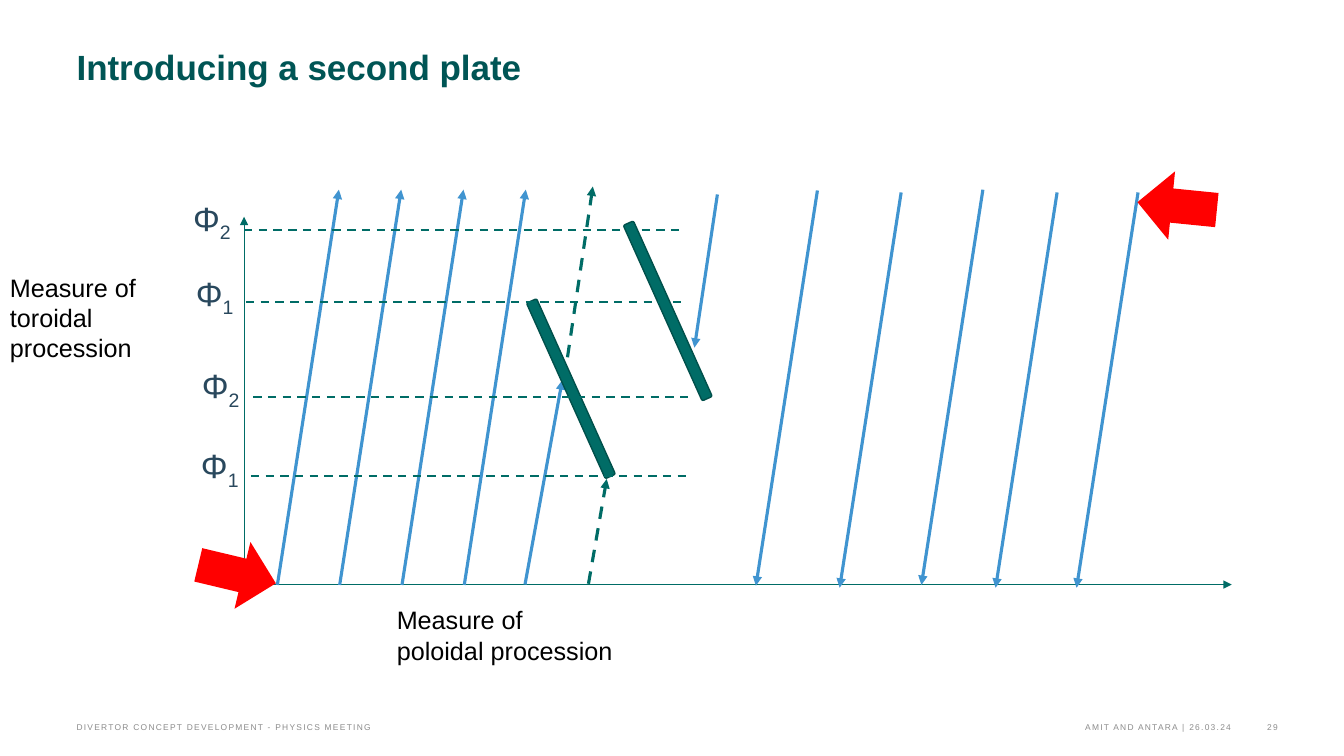
from lxml import etree
from pptx import Presentation
from pptx.dml.color import RGBColor
from pptx.enum.dml import MSO_LINE
from pptx.enum.shapes import MSO_CONNECTOR, MSO_SHAPE
from pptx.enum.text import MSO_ANCHOR, PP_ALIGN
from pptx.oxml.ns import qn
from pptx.util import Cm, Pt

STRAIGHT = MSO_CONNECTOR.STRAIGHT
DASH = MSO_LINE.DASH
PLATE_SHAPE, ARROW_SHAPE = MSO_SHAPE.ROUNDED_RECTANGLE, MSO_SHAPE.DOWN_ARROW
TOP, BOTTOM = MSO_ANCHOR.TOP, MSO_ANCHOR.BOTTOM
LEFT, CENTER, RIGHT = PP_ALIGN.LEFT, PP_ALIGN.CENTER, PP_ALIGN.RIGHT

TITLE_GREEN = RGBColor(0x00, 0x55, 0x55)
GREEN = RGBColor(0x00, 0x6C, 0x66)
DARK_GREEN = RGBColor(0x00, 0x50, 0x4B)
BLUE = RGBColor(0x40, 0x94, 0xD0)
RED = RGBColor(0xFF, 0x00, 0x00)
BLACK = RGBColor(0x00, 0x00, 0x00)
SLATE = RGBColor(0x29, 0x48, 0x5D)
GREY = RGBColor(0x8C, 0x8C, 0x8C)

FIELD_DX, FIELD_DY = 1.55, 9.96
UP_STARTS = [(6.99 + 1.57 * i, 14.74) for i in range(4)]
DOWN_STARTS = [(28.68, 4.85), (26.64, 4.85), (24.77, 4.78), (22.71, 4.85), (20.6, 4.8)]
LEVEL_LENGTH = 11
LEVELS = [
    ("1", (6.32, 11.99), (4.98, 11.56)),
    ("2", (6.38, 10.01), (5, 9.55)),
    ("1", (6.2, 7.62), (4.85, 7.21)),
    ("2", (6.15, 5.79), (4.78, 5.33)),
]
ORIGIN = (6.15, 14.73)


def style_font(font, size, color, bold=False):
    """Apply the slide's typeface with a size and colour."""
    font.name, font.size, font.bold = "Arial", Pt(size), bold
    font.color.rgb = color


def clear_margins(frame):
    """Remove the inner margins of a text frame."""
    frame.margin_left = frame.margin_right = frame.margin_top = frame.margin_bottom = 0


def add_title(slide, text):
    """Place and format the title placeholder."""
    title = slide.shapes.title
    title.left, title.top, title.width, title.height = Cm(1.93), Cm(1.22), Cm(26.59), Cm(2.18)
    frame = title.text_frame
    clear_margins(frame)
    frame.vertical_anchor = TOP
    frame.text = text
    paragraph = frame.paragraphs[0]
    paragraph.alignment = LEFT
    paragraph.line_spacing, paragraph.space_after = Pt(28), Pt(18)
    style_font(paragraph.runs[0].font, 25, TITLE_GREEN, True)


def add_text(slide, box, text, size, color):
    """Add a wrapping text box and return its frame."""
    frame = slide.shapes.add_textbox(*map(Cm, box)).text_frame
    frame.word_wrap = True
    frame.text = text
    style_font(frame.paragraphs[0].runs[0].font, size, color)
    return frame


def add_footer(slide, left, width, text, alignment):
    """Add one letter-spaced footer entry."""
    frame = add_text(slide, (left, 18.03, width, 0.41), text, 6, GREY)
    clear_margins(frame)
    frame.vertical_anchor = BOTTOM
    frame.paragraphs[0].alignment = alignment
    frame.paragraphs[0].runs[0].font._element.set("spc", "90")


def add_line(slide, start, end, color, width, dashed=False, arrow=True):
    """Draw a straight line, dashed or with an arrowhead at its end."""
    connector = slide.shapes.add_connector(STRAIGHT, *map(Cm, (*start, *end)))
    connector.line.color.rgb = color
    connector.line.width = Pt(width)
    if dashed:
        connector.line.dash_style = DASH
    properties = connector._element.spPr
    if arrow:
        etree.SubElement(properties.find(qn("a:ln")), qn("a:tailEnd"), type="triangle")
    etree.SubElement(properties, qn("a:effectLst"))


def add_field_line(slide, start, direction):
    """Draw a full field line, rising for 1 and falling for -1."""
    x, y = start
    end = (x + direction * FIELD_DX, y - direction * FIELD_DY)
    add_line(slide, start, end, BLUE, 2.25)


def add_rotated_shape(slide, kind, box, rotation, fill, outline=None):
    """Add a filled and rotated preset shape."""
    shape = slide.shapes.add_shape(kind, *map(Cm, box))
    shape.rotation = rotation
    shape.shadow.inherit = False
    shape.fill.solid()
    shape.fill.fore_color.rgb = fill
    if outline is None:
        shape.line.fill.background()
    else:
        shape.line.color.rgb = outline
        shape.line.width = Pt(1)


def add_plate(slide, left, top):
    """Add one tilted plate."""
    add_rotated_shape(slide, PLATE_SHAPE, (left, top, 0.28, 4.85), 335.8, GREEN, DARK_GREEN)


def add_entry_arrow(slide, left, top, rotation):
    """Add one red block arrow."""
    add_rotated_shape(slide, ARROW_SHAPE, (left, top, 1.73, 2.01), rotation, RED)


def add_level(slide, index, start, label_corner):
    """Draw a dashed angle level with its subscripted label."""
    x, y = start
    add_line(slide, start, (x + LEVEL_LENGTH, y), GREEN, 1.5, dashed=True, arrow=False)
    frame = add_text(slide, (*label_corner, 1.12, 0.81), "Φ", 24, SLATE)
    clear_margins(frame)
    paragraph = frame.paragraphs[0]
    paragraph.alignment, paragraph.line_spacing = CENTER, Pt(23)
    subscript = paragraph.add_run()
    subscript.text = index
    style_font(subscript.font, 24, SLATE)
    subscript.font._element.set("baseline", "-25000")


def main():
    """Build the slide and save it."""
    deck = Presentation()
    deck.slide_width, deck.slide_height = Cm(33.87), Cm(19.05)
    slide = deck.slides.add_slide(deck.slide_layouts[5])

    add_title(slide, "Introducing a second plate")
    for axis_end in ((6.15, 5.46), (31.04, 14.73)):
        add_line(slide, ORIGIN, axis_end, GREEN, 0.5)
    add_text(slide, (0, 6.73, 3.76, 2.57), "Measure of toroidal procession", 18, BLACK)
    add_text(slide, (9.75, 15.11, 5.94, 1.8), "Measure of poloidal procession", 18, BLACK)

    for start in UP_STARTS:
        add_field_line(slide, start, 1)
    add_line(slide, (13.23, 14.73), (14.17, 9.58), BLUE, 2.25)
    add_line(slide, (14.83, 14.71), (15.29, 12.07), GREEN, 2.25, dashed=True)
    add_line(slide, (14.22, 9.55), (14.94, 4.7), GREEN, 2.25, dashed=True)
    add_plate(slide, 14.25, 7.37)
    for start in DOWN_STARTS:
        add_field_line(slide, start, -1)
    add_plate(slide, 16.69, 5.41)
    add_line(slide, (18.08, 4.9), (17.5, 8.76), BLUE, 2.25)

    for level in LEVELS:
        add_level(slide, *level)
    add_entry_arrow(slide, 5.11, 13.46, 283.4)
    add_entry_arrow(slide, 28.8, 4.19, 95.7)

    add_footer(slide, 11.46, 19.56, "AMIT AND ANTARA | 26.03.24", RIGHT)
    add_footer(slide, 1.93, 16.92, "DIVERTOR CONCEPT DEVELOPMENT - PHYSICS MEETING", LEFT)
    add_footer(slide, 31.01, 1.19, "29", RIGHT)
    deck.save("out.pptx")


if __name__ == "__main__":
    main()
